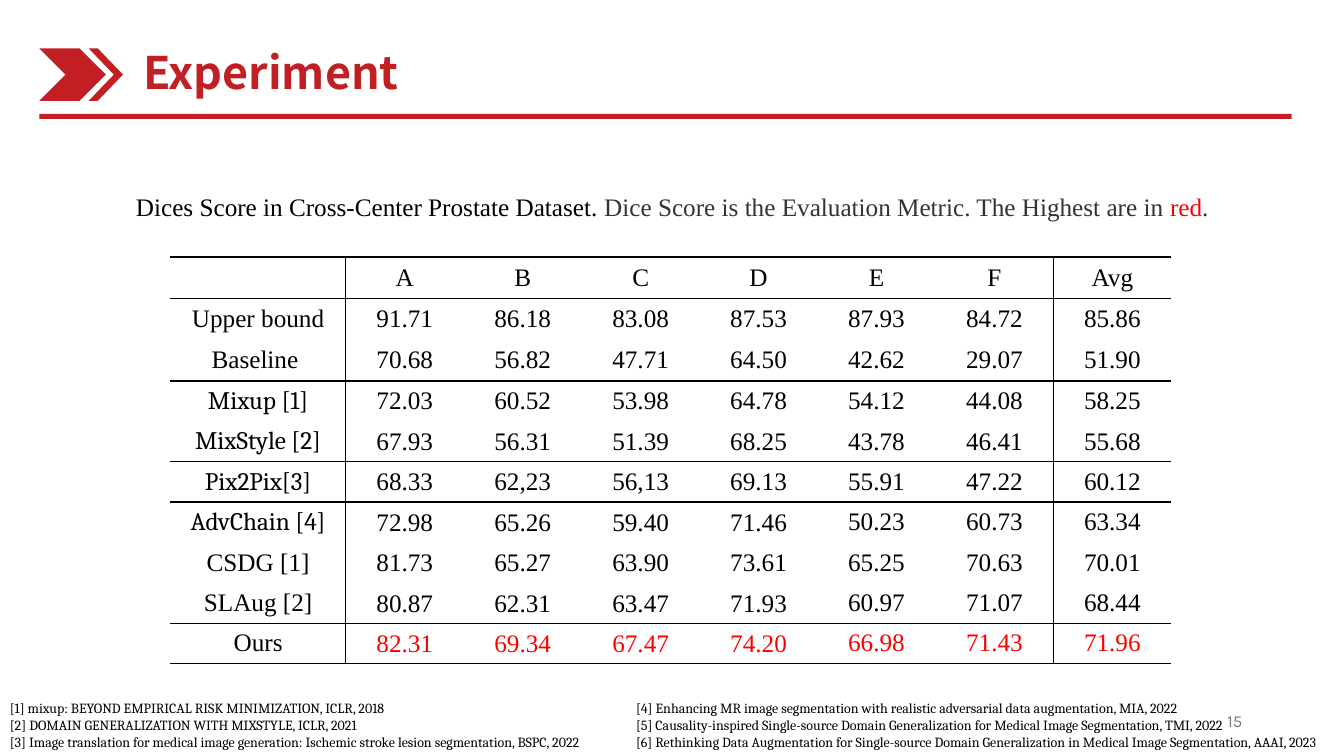
from lxml.etree import SubElement
from pptx import Presentation
from pptx.dml.color import RGBColor
from pptx.enum.shapes import MSO_SHAPE as Shape
from pptx.enum.text import MSO_ANCHOR as Anchor, MSO_AUTO_SIZE as AutoSize, PP_ALIGN as Align
from pptx.oxml import parse_xml
from pptx.oxml.ns import nsdecls, qn
from pptx.util import Inches, Pt

COLORS = {"brand": "C11F23", "black": "000000", "dark": "333333",
          "best": "FF0000", "number": "797979"}
SERIF = "Times New Roman"
REFERENCE_FONT = "Cambria"
CENTERS = ["", "A", "B", "C", "D", "E", "F", "Avg"]
SCORES = [
    CENTERS,
    ["Upper bound", "91.71", "86.18", "83.08", "87.53", "87.93", "84.72", "85.86"],
    ["Baseline ", "70.68", "56.82", "47.71", "64.50", "42.62", "29.07", "51.90"],
    ["Mixup [1]", "72.03", "60.52", "53.98", "64.78", "54.12", "44.08", "58.25"],
    ["MixStyle [2]", "67.93", "56.31", "51.39", "68.25", "43.78", "46.41", "55.68"],
    ["Pix2Pix[3]", "68.33", "62,23", "56,13", "69.13", "55.91", "47.22", "60.12"],
    ["AdvChain [4]", "72.98", "65.26", "59.40", "71.46", "50.23", "60.73", "63.34"],
    ["CSDG [1]", "81.73", "65.27", "63.90", "73.61", "65.25", "70.63", "70.01"],
    ["SLAug [2]", "80.87", "62.31", "63.47", "71.93", "60.97", "71.07", "68.44"],
    ["Ours", "82.31", "69.34", "67.47", "74.20", "66.98", "71.43", "71.96"],
]
RULES_BELOW = {0, 2, 4, 5, 8, 9}
RULES_RIGHT = {0, 6}
CAMBRIA_ROWS = range(3, 7)
TIGHT_ROWS = {4, 5, 6, 8, 9}
REFERENCES_LEFT = [
    "[1] mixup: BEYOND EMPIRICAL RISK MINIMIZATION, ICLR, 2018",
    "[2] DOMAIN GENERALIZATION WITH MIXSTYLE, ICLR, 2021",
    "[3] Image translation for medical image generation: Ischemic stroke lesion segmentation, BSPC, 2022",
]
REFERENCES_RIGHT = [
    "[4] Enhancing MR image segmentation with realistic adversarial data augmentation, MIA, 2022",
    "[5] Causality-inspired Single-source Domain Generalization for Medical Image Segmentation, TMI, 2022",
    "[6] Rethinking Data Augmentation for Single-source Domain Generalization in Medical Image Segmentation, AAAI, 2023",
]


def add_run(paragraph, text, font=SERIF, size=18, color="black", bold=False):
    run = paragraph.add_run()
    run.text = text
    run.font.name = font
    run.font.size = Pt(size)
    run.font.bold = bold
    run.font.color.rgb = RGBColor.from_string(COLORS[color])
    properties = run._r.get_or_add_rPr()
    SubElement(properties, qn("a:ea")).set("typeface", font)


def add_textbox(slide, box, paragraphs, align=Align.LEFT, anchor=Anchor.TOP,
                wrap=True, grow=True, **style):
    frame = slide.shapes.add_textbox(*map(Inches, box)).text_frame
    frame.word_wrap = wrap
    frame.auto_size = AutoSize.SHAPE_TO_FIT_TEXT if grow else AutoSize.NONE
    frame.vertical_anchor = anchor
    for index, runs in enumerate(paragraphs):
        paragraph = frame.add_paragraph() if index else frame.paragraphs[0]
        paragraph.alignment = align
        for text, color in runs:
            add_run(paragraph, text, color=color, **style)


def add_brand_shape(shapes, kind, box, adjustment=None):
    mark = shapes.add_shape(kind, *map(Inches, box))
    mark.shadow.inherit = False
    mark.fill.solid()
    mark.fill.fore_color.rgb = RGBColor.from_string(COLORS["brand"])
    mark.line.fill.background()
    if adjustment is not None:
        mark.adjustments[0] = adjustment


def set_borders(cell, left, right, top, bottom):
    properties = cell._tc.get_or_add_tcPr()
    sides = {"lnL": left, "lnR": right, "lnT": top, "lnB": bottom}
    for index, (side, visible) in enumerate(sides.items()):
        paint = (f'<a:solidFill><a:srgbClr val="{COLORS["black"]}"/></a:solidFill>'
                 if visible else "<a:noFill/>")
        border = parse_xml(f'<a:{side} {nsdecls("a")} w="{Pt(1)}">{paint}</a:{side}>')
        properties.insert(index, border)


def add_score_table(slide):
    box = map(Inches, (1.69, 2.55, 9.92, 4.03))
    table = slide.shapes.add_table(len(SCORES), len(CENTERS), *box).table
    table.first_row = False
    table.horz_banding = False
    for index, column in enumerate(table.columns):
        column.width = Inches(1.17 if index else 1.74)
    for index, row in enumerate(table.rows):
        row.height = Inches(0.41 if index < 3 else 0.4)
    last_row = len(SCORES) - 1
    for row, values in enumerate(SCORES):
        for column, value in enumerate(values):
            cell = table.cell(row, column)
            cell.vertical_anchor = Anchor.MIDDLE
            cell.fill.background()
            if row in TIGHT_ROWS and 1 <= column <= 4:
                cell.margin_left = cell.margin_right = cell.margin_top = Inches(0.01)
                cell.margin_bottom = 0
            paragraph = cell.text_frame.paragraphs[0]
            paragraph.alignment = Align.CENTER
            if value:
                is_cited = column == 0 and row in CAMBRIA_ROWS
                is_best = column > 0 and row == last_row
                add_run(paragraph, value, font=REFERENCE_FONT if is_cited else SERIF,
                        color="best" if is_best else "black")
            set_borders(cell, left=column - 1 in RULES_RIGHT, right=column in RULES_RIGHT,
                        top=row == 0 or row - 1 in RULES_BELOW, bottom=row in RULES_BELOW)


def add_header(slide):
    add_brand_shape(slide.shapes, Shape.RECTANGLE, (0.39, 1.13, 12.42, 0.05))
    arrows = slide.shapes.add_group_shape().shapes
    add_brand_shape(arrows, Shape.CHEVRON, (0.39, 0.48, 0.66, 0.52))
    add_brand_shape(arrows, Shape.CHEVRON, (0.88, 0.48, 0.34, 0.52), 0.735)
    add_textbox(slide, (1.32, 0.39, 4.72, 0.64), [[("Experiment", "brand")]],
                font="Noto Sans CJK SC", size=32, bold=True)


def add_references(slide, box, references):
    add_textbox(slide, box, [[(reference, "black")] for reference in references],
                font=REFERENCE_FONT, size=10)


def main():
    deck = Presentation()
    deck.slide_width = Inches(13.33)
    deck.slide_height = Inches(7.5)
    slide = deck.slides.add_slide(deck.slide_layouts[6])
    add_header(slide)
    add_score_table(slide)
    add_textbox(slide, (1.25, 1.85, 10.95, 0.4), [[
        ("Dices Score in Cross-Center Prostate Dataset. ", "black"),
        ("Dice Score is the Evaluation Metric. The Highest are in ", "dark"),
        ("red", "best"),
        (".", "dark"),
    ]], wrap=False)
    add_references(slide, (0, 6.89, 8.54, 0.61), REFERENCES_LEFT)
    add_references(slide, (6.21, 6.89, 7.12, 0.61), REFERENCES_RIGHT)
    add_textbox(slide, (9.42, 6.95, 3, 0.4), [[("15", "number")]], align=Align.RIGHT,
                anchor=Anchor.MIDDLE, grow=False, font="Karla", size=12)
    deck.save("out.pptx")


if __name__ == "__main__":
    main()
